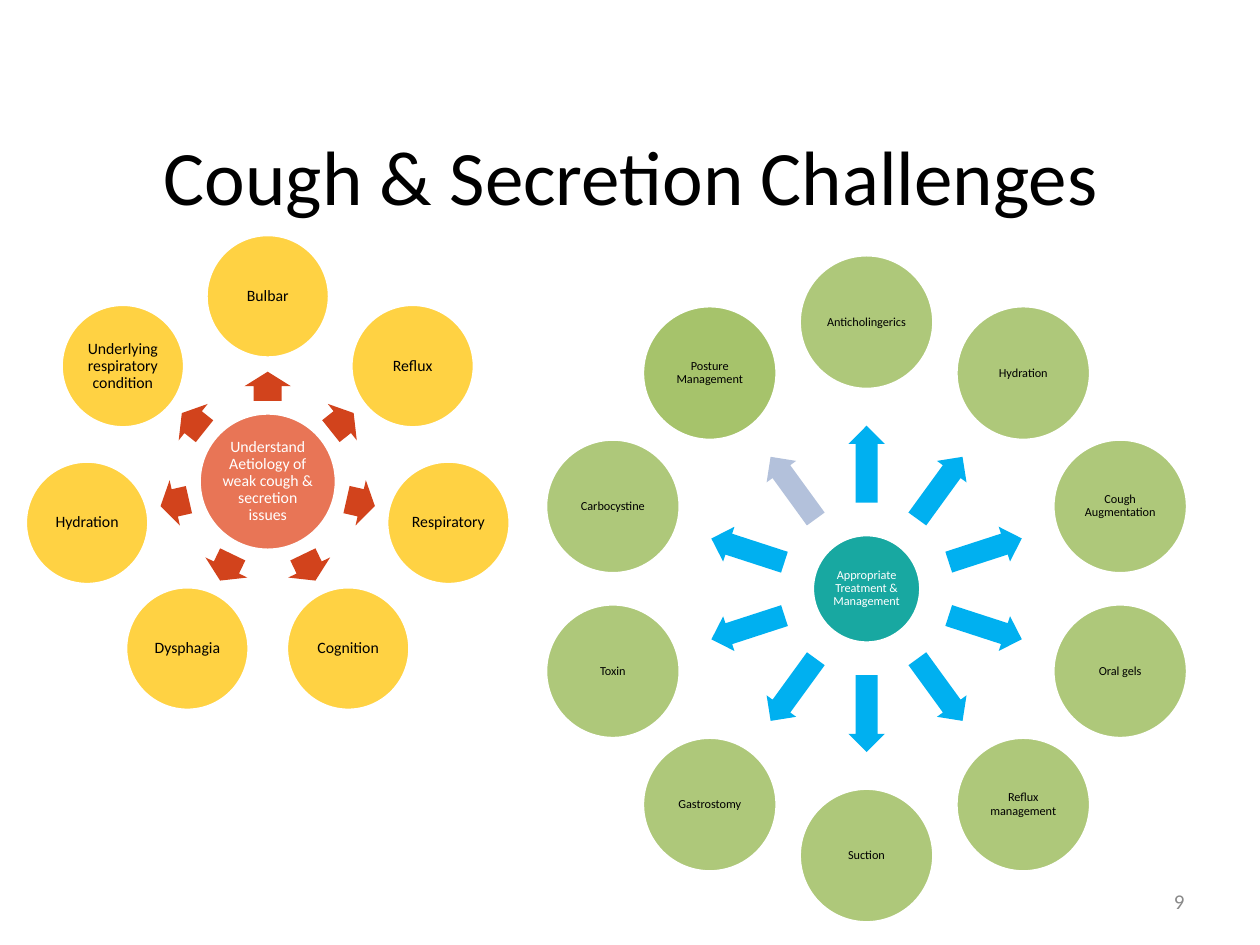
"""Build the cough and secretion challenges slide with two radial diagrams."""
from math import cos, radians, sin

from pptx import Presentation
from pptx.dml.color import RGBColor
from pptx.enum.shapes import MSO_SHAPE as Shape
from pptx.enum.text import MSO_ANCHOR as Anchor, PP_ALIGN as Align
from pptx.util import Pt

BLACK = RGBColor(0x00, 0x00, 0x00)
WHITE = RGBColor(0xFF, 0xFF, 0xFF)
GREY = RGBColor(0x89, 0x89, 0x89)
TEAL = RGBColor(0x18, 0xA8, 0xA1)
BLUE = RGBColor(0x00, 0xB0, 0xF0)
PALE_BLUE = RGBColor(0xB3, 0xC1, 0xDB)
GREEN = RGBColor(0xAE, 0xC8, 0x7A)
DEEP_GREEN = RGBColor(0xA6, 0xC3, 0x6B)
CORAL = RGBColor(0xE8, 0x75, 0x56)
RED = RGBColor(0xD2, 0x43, 0x1C)
YELLOW = RGBColor(0xFF, 0xD2, 0x43)

TITLE = "Cough & Secretion Challenges"
PAGE_NUMBER = "9"
TREATMENT = {
    "hub": "Appropriate Treatment & Management",
    "items": ["Anticholingerics", "Hydration", "Cough Augmentation", "Oral gels",
              "Reflux management", "Suction", "Gastrostomy", "Toxin",
              "Carbocystine", "Posture Management"],
    "center": (495.2, 336.5), "hub_size": 62, "hub_color": TEAL,
    "item_size": 77, "item_radius": 152.4, "item_color": GREEN,
    "arrow_size": (43.9, 20.9), "arrow_radius": 71.3, "arrow_color": BLUE,
    "last_colors": (PALE_BLUE, DEEP_GREEN), "font_size": 7,
}
AETIOLOGY = {
    "hub": "Understand Aetiology of weak cough & secretion issues",
    "items": ["Bulbar", "Reflux", "Respiratory", "Cognition", "Dysphagia",
              "Hydration", "Underlying respiratory condition"],
    "center": (153, 275.2), "hub_size": 78.5, "hub_color": CORAL,
    "item_size": 70.6, "item_radius": 105.9, "item_color": YELLOW,
    "arrow_size": (16.6, 26.6), "arrow_radius": 54.5, "arrow_color": RED,
    "last_colors": (RED, YELLOW), "font_size": 9,
}


def write(shape, text, size, color, align):
    frame = shape.text_frame
    frame.word_wrap = True
    frame.vertical_anchor = Anchor.MIDDLE
    paragraph = frame.paragraphs[0]
    paragraph.text = text
    paragraph.alignment = align
    paragraph.font.name = "Calibri"
    paragraph.font.size = Pt(size)
    paragraph.font.color.rgb = color
    return frame


def add_text(slide, box, text, size, color, align):
    textbox = slide.shapes.add_textbox(*map(Pt, box))
    write(textbox, text, size, color, align)


def add_centered(group, kind, center, width, height, color):
    left, top = center[0] - width / 2, center[1] - height / 2
    shape = group.shapes.add_shape(kind, Pt(left), Pt(top), Pt(width), Pt(height))
    shape.shadow.inherit = False
    shape.fill.solid()
    shape.fill.fore_color.rgb = color
    return shape


def add_circle(group, center, diameter, color, text, size, text_color):
    circle = add_centered(group, Shape.OVAL, center, diameter, diameter, color)
    circle.line.color.rgb = WHITE
    circle.line.width = Pt(2)
    frame = write(circle, text, size, text_color, Align.CENTER)
    frame.margin_left = frame.margin_right = Pt(0.7)
    frame.margin_top = frame.margin_bottom = Pt(0.7)
    frame.paragraphs[0].line_spacing = 0.9


def add_arrow(group, center, size, color, angle):
    arrow = add_centered(group, Shape.RIGHT_ARROW, center, *size, color)
    arrow.adjustments[0] = 0.6
    arrow.adjustments[1] = 0.5
    arrow.line.fill.background()
    arrow.rotation = angle % 360


def polar(center, radius, angle):
    turn = radians(angle)
    return center[0] + radius * cos(turn), center[1] + radius * sin(turn)


def add_wheel(slide, wheel):
    group = slide.shapes.add_group_shape()
    center, items, size = wheel["center"], wheel["items"], wheel["font_size"]
    add_circle(group, center, wheel["hub_size"], wheel["hub_color"],
               wheel["hub"], size, WHITE)
    for index, item in enumerate(items):
        angle = 360 * index / len(items) - 90
        colors = wheel["arrow_color"], wheel["item_color"]
        if index == len(items) - 1:
            colors = wheel["last_colors"]
        add_arrow(group, polar(center, wheel["arrow_radius"], angle),
                  wheel["arrow_size"], colors[0], angle)
        add_circle(group, polar(center, wheel["item_radius"], angle),
                   wheel["item_size"], colors[1], item, size, BLACK)


def main():
    presentation = Presentation()
    presentation.slide_width, presentation.slide_height = Pt(720), Pt(540)
    slide = presentation.slides.add_slide(presentation.slide_layouts[6])
    add_text(slide, (36.7, 54.7, 648, 90), TITLE, 44, BLACK, Align.CENTER)
    add_text(slide, (516, 500.5, 168, 28.75), PAGE_NUMBER, 12, GREY, Align.RIGHT)
    for wheel in (TREATMENT, AETIOLOGY):
        add_wheel(slide, wheel)
    presentation.save("out.pptx")


if __name__ == "__main__":
    main()
